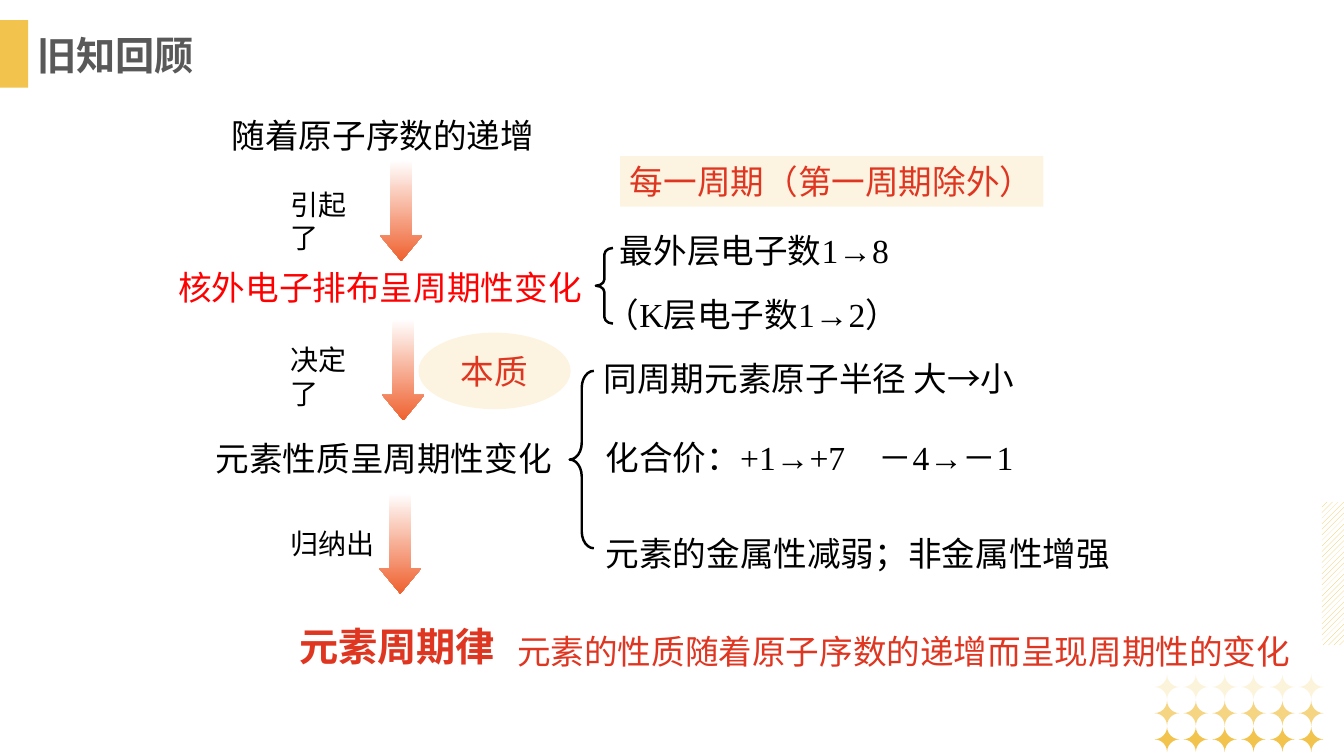
from dataclasses import dataclass

from lxml.etree import SubElement
from pptx import Presentation
from pptx.dml.color import RGBColor
from pptx.enum.dml import MSO_PATTERN
from pptx.enum.shapes import MSO_SHAPE
from pptx.enum.text import MSO_ANCHOR, MSO_AUTO_SIZE, PP_ALIGN
from pptx.oxml.ns import qn
from pptx.shapes.autoshape import Shape
from pptx.slide import Slide
from pptx.util import Inches, Pt

Box = tuple[float, float, float, float]


@dataclass(frozen=True)
class Theme:
    gold: RGBColor = RGBColor(0xF2, 0xC3, 0x4D)
    white: RGBColor = RGBColor(0xFF, 0xFF, 0xFF)
    black: RGBColor = RGBColor(0, 0, 0)
    gray: RGBColor = RGBColor(0x59, 0x59, 0x59)
    red: RGBColor = RGBColor(0xFF, 0, 0)
    brick: RGBColor = RGBColor(0xDF, 0x36, 0x21)
    orange: RGBColor = RGBColor(0xEF, 0x61, 0x2F)
    serif: str = "Times New Roman"
    sans: str = "Arial"
    small: int = 20
    body: int = 24
    large: int = 28
    tint: int = 17


THEME = Theme()


@dataclass(frozen=True)
class Label:
    text: str
    box: Box
    color: RGBColor = THEME.black
    size: int = THEME.body
    bold: bool = False
    font: str = THEME.serif
    wrap: bool = True
    spacing: float = 1.0


@dataclass(frozen=True)
class Brace:
    box: Box
    curl: float


@dataclass(frozen=True)
class Badge:
    kind: MSO_SHAPE
    label: Label
    align: PP_ALIGN


LABELS = [
    Label("旧知回顾", (0.27, 0.26, 1.76, 0.57), THEME.gray, THEME.large, True, THEME.sans, False),
    Label("随着原子序数的递增", (2.2, 1.09, 3.27, 0.5)),
    Label("引起了", (2.78, 1.81, 1.03, 0.44), size=THEME.small, wrap=False),
    Label("核外电子排布呈周期性变化", (1.67, 2.6, 4.38, 0.5), THEME.red),
    Label("决定了", (2.78, 3.35, 1.03, 0.44), size=THEME.small, wrap=False),
    Label("元素性质呈周期性变化", (2.04, 4.3, 3.59, 0.5)),
    Label("归纳出", (2.78, 5.17, 1.32, 0.44), size=THEME.small),
    Label("元素周期律", (2.87, 6.12, 2.24, 0.57), THEME.brick, THEME.large, True),
    Label("元素的性质随着原子序数的递增而呈现周期性的变化", (5.03, 6.01, 7.89, 0.71),
          THEME.brick, spacing=1.5),
    Label("最外层电子数1→8", (6.05, 2.23, 4.25, 0.5)),
    Label("（K层电子数1→2）", (5.91, 2.87, 3.61, 0.5)),
    Label("同周期元素原子半径 大→小", (5.89, 3.5, 5.14, 0.5)),
    Label("化合价：+1→+7　－4→－1", (5.91, 4.29, 5.17, 0.5)),
    Label("元素的金属性减弱；非金属性增强", (5.91, 5.04, 5.44, 0.71), spacing=1.5),
]
BRACES = [Brace((5.91, 2.46, 0.17, 0.75), 0.375), Brace((5.65, 3.68, 0.24, 1.76), 0.695)]
ARROWS = [(3.77, 1.59), (3.79, 3.17), (3.76, 4.89)]
BADGES = [
    Badge(MSO_SHAPE.OVAL, Label("本质", (4.15, 3.3, 1.51, 0.76), THEME.brick), PP_ALIGN.CENTER),
    Badge(MSO_SHAPE.RECTANGLE,
          Label("每一周期（第一周期除外）", (6.15, 1.55, 4.2, 0.5), THEME.brick, wrap=False),
          PP_ALIGN.LEFT),
]
STAR_ROWS = [20, 70, 100]
STAR_COLS = 6


def add_shape(slide: Slide, kind: MSO_SHAPE, box: Box) -> Shape:
    shape = slide.shapes.add_shape(kind, *map(Inches, box))
    shape.shadow.inherit = False
    shape.line.fill.background()
    return shape


def fill_gold(shape: Shape, alpha: int = 100) -> None:
    """Fill with gold at an opacity given in percent."""
    shape.fill.solid()
    shape.fill.fore_color.rgb = THEME.gold
    if alpha < 100:
        color = shape.element.spPr.find(qn("a:solidFill"))[0]
        SubElement(color, qn("a:alpha"), val=str(alpha * 1000))


def write(shape: Shape, label: Label, align: PP_ALIGN = PP_ALIGN.LEFT) -> None:
    frame = shape.text_frame
    frame.text = label.text
    frame.word_wrap = label.wrap
    frame.auto_size = MSO_AUTO_SIZE.SHAPE_TO_FIT_TEXT
    line = frame.paragraphs[0]
    line.alignment = align
    line.line_spacing = label.spacing
    font = line.runs[0].font
    font.name = label.font
    font.size = Pt(label.size)
    font.bold = label.bold
    font.color.rgb = label.color


def add_label(slide: Slide, label: Label) -> None:
    write(slide.shapes.add_textbox(*map(Inches, label.box)), label)


def add_brace(slide: Slide, brace: Brace) -> None:
    shape = add_shape(slide, MSO_SHAPE.LEFT_BRACE, brace.box)
    shape.adjustments[0] = brace.curl
    shape.fill.background()
    shape.line.color.rgb = THEME.black
    shape.line.width = Pt(1.75)


def add_arrow(slide: Slide, left: float, top: float) -> None:
    shape = add_shape(slide, MSO_SHAPE.DOWN_ARROW, (left, top, 0.42, 1))
    shape.adjustments[0] = 0.5
    shape.adjustments[1] = 0.6
    shape.fill.gradient()
    shape.fill.gradient_angle = 270
    for stop, color in zip(shape.fill.gradient_stops, (THEME.white, THEME.orange)):
        stop.color.rgb = color


def add_badge(slide: Slide, badge: Badge) -> None:
    shape = add_shape(slide, badge.kind, badge.label.box)
    fill_gold(shape, THEME.tint)
    write(shape, badge.label, badge.align)
    shape.text_frame.vertical_anchor = MSO_ANCHOR.MIDDLE


def add_decor(slide: Slide) -> None:
    """Draw the title bar, the hatched edge and the fading grid of stars."""
    fill_gold(add_shape(slide, MSO_SHAPE.RECTANGLE, (0, 0.2, 0.28, 0.67)))
    hatch = add_shape(slide, MSO_SHAPE.RECTANGLE, (13.11, 4.98, 0.22, 1.42)).fill
    hatch.patterned()
    hatch.pattern = MSO_PATTERN.WIDE_UPWARD_DIAGONAL
    hatch.fore_color.rgb = THEME.gold
    hatch.back_color.rgb = THEME.white
    for row, alpha in enumerate(STAR_ROWS):
        for col in range(STAR_COLS):
            box = (11.45 + col * 1.43 / 5, 6.69 + row * 0.26, 0.25, 0.25)
            star = add_shape(slide, MSO_SHAPE.PLAQUE, box)
            star.adjustments[0] = 0.5
            fill_gold(star, alpha)


def main() -> None:
    deck = Presentation()
    deck.slide_width = Inches(13.33)
    deck.slide_height = Inches(7.5)
    slide = deck.slides.add_slide(deck.slide_layouts[6])
    add_decor(slide)
    for label in LABELS:
        add_label(slide, label)
    for brace in BRACES:
        add_brace(slide, brace)
    for left, top in ARROWS:
        add_arrow(slide, left, top)
    for badge in BADGES:
        add_badge(slide, badge)
    deck.save("out.pptx")


if __name__ == "__main__":
    main()
